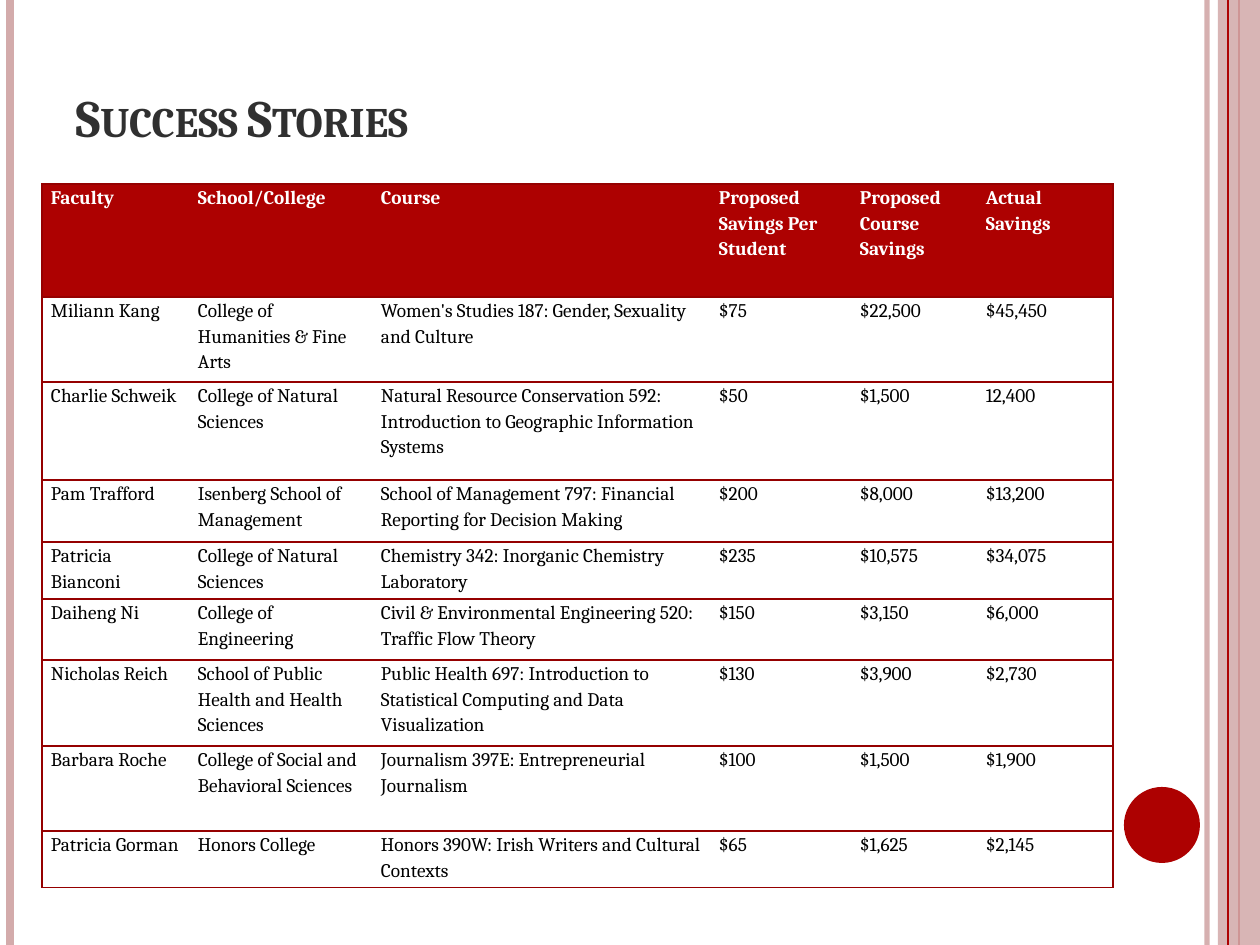
"""Build the Success Stories slide with its table of course savings."""
from lxml import etree
from pptx import Presentation
from pptx import util as u
from pptx.dml.color import RGBColor
from pptx.enum import shapes, text
from pptx.oxml import ns

SCALE = 914400 / 126
PAGE_WIDTH, PAGE_HEIGHT = 1260, 945
FONT = "Cambria"
RED = RGBColor(0xAD, 0x01, 0x01)
BORDER = RGBColor(0x95, 0x00, 0x00)
PINK = RGBColor(0xD3, 0xAB, 0xAB)
CHARCOAL = RGBColor(0x30, 0x30, 0x30)
WHITE = RGBColor(0xFF, 0xFF, 0xFF)
BLACK = RGBColor(0x00, 0x00, 0x00)

COLUMN_WIDTHS = [147, 183, 338, 141, 126, 136]
ROW_HEIGHTS = [113, 85, 98, 62, 57, 61, 86, 85, 57]
ROWS = [
    ("Faculty", "School/College", "Course", "Proposed Savings Per Student",
     "Proposed Course Savings", "Actual Savings"),
    ("Miliann Kang", "College of Humanities & Fine Arts",
     "Women's Studies 187: Gender, Sexuality and Culture",
     "$75", "$22,500", "$45,450"),
    ("Charlie Schweik", "College of Natural Sciences",
     "Natural Resource Conservation 592: Introduction to Geographic Information Systems",
     "$50", "$1,500", "12,400"),
    ("Pam Trafford", "Isenberg School of Management",
     "School of Management 797: Financial Reporting for Decision Making",
     "$200", "$8,000", "$13,200"),
    ("Patricia Bianconi", "College of Natural Sciences",
     "Chemistry 342: Inorganic Chemistry Laboratory",
     "$235", "$10,575", "$34,075"),
    ("Daiheng Ni", "College of Engineering",
     "Civil & Environmental Engineering 520: Traffic Flow Theory",
     "$150", "$3,150", "$6,000"),
    ("Nicholas Reich", "School of Public Health and Health Sciences",
     "Public Health 697: Introduction to Statistical Computing and Data Visualization",
     "$130", "$3,900", "$2,730"),
    ("Barbara Roche", "College of Social and Behavioral Sciences",
     "Journalism 397E: Entrepreneurial Journalism",
     "$100", "$1,500", "$1,900"),
    ("Patricia Gorman", "Honors College",
     "Honors 390W: Irish Writers and Cultural Contexts",
     "$65", "$1,625", "$2,145"),
]


def px(length):
    """Turn pixels into EMU."""
    return u.Emu(round(length * SCALE))


def set_opacity(shape, percent):
    """Make the coloured parts of a shape partly transparent."""
    for color in shape._element.spPr.iter(ns.qn("a:srgbClr")):
        etree.SubElement(color, ns.qn("a:alpha")).set("val", str(percent * 1000))


def add_rule(page, x, color, weight):
    """Draw a vertical line over the full page height."""
    rule = page.shapes.add_connector(
        shapes.MSO_CONNECTOR.STRAIGHT, px(x), 0, px(x), px(PAGE_HEIGHT))
    rule.line.color.rgb = color
    rule.line.width = u.Pt(weight)
    etree.SubElement(rule._element.spPr, ns.qn("a:effectLst"))
    return rule


def add_plain_shape(page, kind, left, top, width, height, color):
    """Add a filled shape without outline or shadow."""
    shape = page.shapes.add_shape(kind, px(left), px(top), px(width), px(height))
    shape.fill.solid()
    shape.fill.fore_color.rgb = color
    shape.line.fill.background()
    shape.shadow.inherit = False
    return shape


def add_span(para, words, size, color, bold):
    """Add one formatted run to a paragraph."""
    span = para.add_run()
    span.text = words
    span.font.name = FONT
    span.font.size = u.Pt(size)
    span.font.bold = bold
    span.font.color.rgb = color
    return span


def set_title(page, words):
    """Place and format the title in small capitals."""
    box = page.shapes.title
    box.left, box.top, box.width, box.height = px(63), px(38), px(1029), px(157)
    box.text_frame.vertical_anchor = text.MSO_ANCHOR.MIDDLE
    para = box.text_frame.paragraphs[0]
    para.alignment = text.PP_ALIGN.LEFT
    span = add_span(para, words, 30, CHARCOAL, True)
    span.font._element.set("cap", "small")


def set_border(cell, side, visible):
    """Draw or hide one side of a cell."""
    line = etree.SubElement(cell._tc.get_or_add_tcPr(), ns.qn("a:ln" + side))
    line.set("w", str(u.Pt(1)))
    if visible:
        fill = etree.SubElement(line, ns.qn("a:solidFill"))
        etree.SubElement(fill, ns.qn("a:srgbClr")).set("val", str(BORDER))
    else:
        etree.SubElement(line, ns.qn("a:noFill"))


def fill_cell(cell, words, is_header, is_first, is_last):
    """Write a cell and set its margins, borders and fill."""
    cell.margin_left = cell.margin_right = px(9)
    cell.margin_top = cell.margin_bottom = 0
    cell.vertical_anchor = text.MSO_ANCHOR.TOP
    for side, visible in (("L", is_first), ("R", is_last), ("T", True), ("B", True)):
        set_border(cell, side, visible)
    cell.fill.solid()
    cell.fill.fore_color.rgb = RED if is_header else WHITE
    para = cell.text_frame.paragraphs[0]
    para.line_spacing = 1.15
    add_span(para, words, 11, WHITE if is_header else BLACK, is_header)


def add_savings_table(page):
    """Add the table of faculty, courses and savings."""
    frame = page.shapes.add_table(
        len(ROWS), len(COLUMN_WIDTHS), px(42), px(184),
        px(sum(COLUMN_WIDTHS)), px(sum(ROW_HEIGHTS)))
    table = frame.table
    table.horz_banding = False
    for column, width in zip(table.columns, COLUMN_WIDTHS):
        column.width = px(width)
    last = len(COLUMN_WIDTHS) - 1
    for index, (row, height) in enumerate(zip(table.rows, ROW_HEIGHTS)):
        row.height = px(height)
        for place, (cell, words) in enumerate(zip(row.cells, ROWS[index])):
            fill_cell(cell, words, index == 0, place == 0, place == last)


def add_decoration(page):
    """Add the side lines, the right band and the circle."""
    set_opacity(add_rule(page, 1207, PINK, 3), 93)
    add_rule(page, 10, PINK, 4.5)
    add_rule(page, 1239, RED, 1.5)
    band = add_plain_shape(
        page, shapes.MSO_SHAPE.RECTANGLE, 1218, 0, 42, PAGE_HEIGHT, PINK)
    set_opacity(band, 87)
    add_rule(page, 1228, RED, 0.75)
    add_plain_shape(page, shapes.MSO_SHAPE.OVAL, 1124, 787, 76, 76, RED)


def main():
    """Build and save the deck."""
    deck = Presentation()
    deck.slide_width, deck.slide_height = px(PAGE_WIDTH), px(PAGE_HEIGHT)
    page = deck.slides.add_slide(deck.slide_layouts.get_by_name("Title Only"))
    add_decoration(page)
    set_title(page, "Success Stories")
    add_savings_table(page)
    deck.save("out.pptx")


if __name__ == "__main__":
    main()
